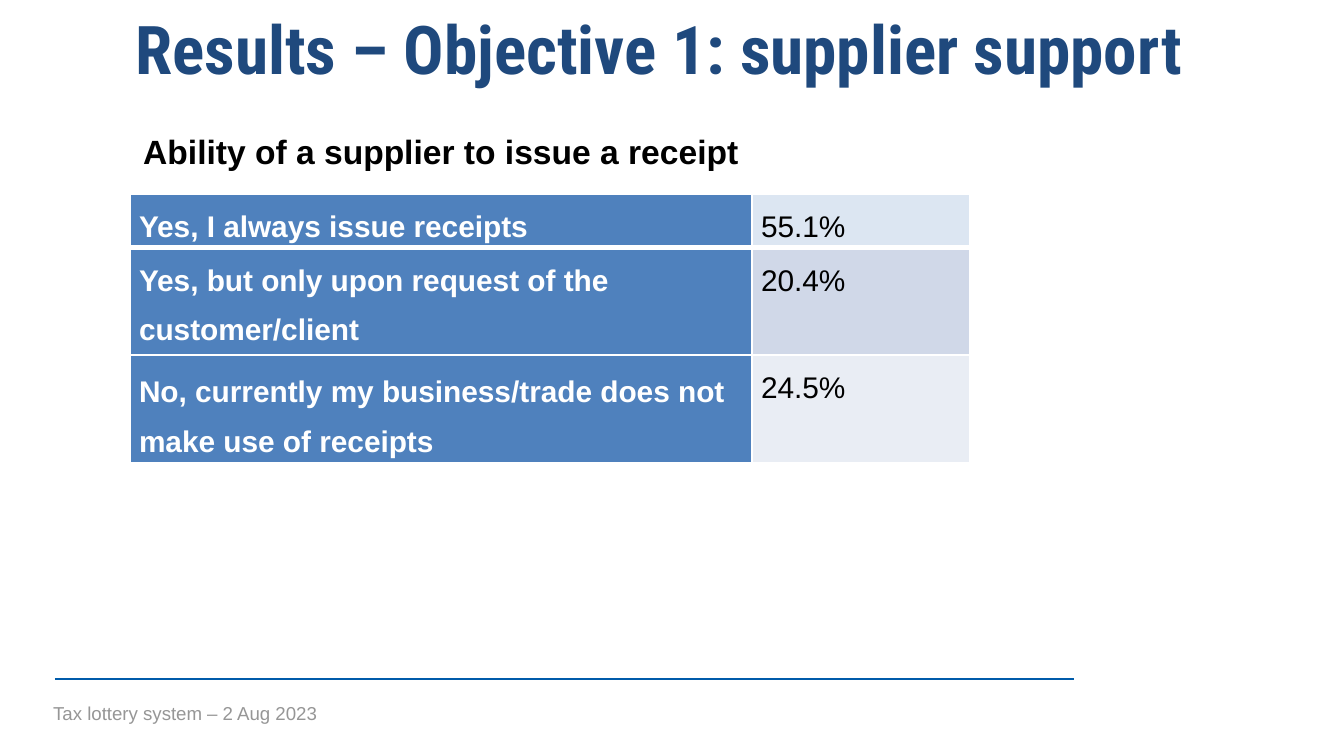
import pptx
import pptx.dml.color
import pptx.enum.shapes
import pptx.enum.text
import pptx.oxml
import pptx.oxml.ns
import pptx.util

RGBColor = pptx.dml.color.RGBColor
Anchor = pptx.enum.text.MSO_ANCHOR
Align = pptx.enum.text.PP_ALIGN

NAVY = RGBColor(0x1F, 0x49, 0x7D)
RULE_BLUE = RGBColor(0x00, 0x5B, 0xAA)
LABEL_BLUE = RGBColor(0x4F, 0x81, 0xBD)
GREY = RGBColor(0x96, 0x96, 0x96)
BLACK = RGBColor(0x00, 0x00, 0x00)
WHITE = RGBColor(0xFF, 0xFF, 0xFF)

PX = 914400 / 134.4


def px(length):
    return pptx.util.Emu(round(length * PX))


def write(frame, text, size, color, bold=False, font="Arial"):
    """Put one run in the first paragraph and return that paragraph."""
    para = frame.paragraphs[0]
    span = para.add_run()
    span.text = text
    span.font.name = font
    span.font.size = pptx.util.Pt(size)
    span.font.bold = bold
    span.font.color.rgb = color
    return para


deck = pptx.Presentation()
deck.slide_width, deck.slide_height = px(1344), px(756)
page = deck.slides.add_slide(deck.slide_layouts[5])

# Title
title = page.shapes.title
title.left, title.top, title.width, title.height = px(24), px(4), px(1270), px(89)
frame = title.text_frame
frame.word_wrap = True
frame.auto_size = pptx.enum.text.MSO_AUTO_SIZE.NONE
frame.vertical_anchor = Anchor.TOP
frame.margin_left = frame.margin_right = px(7)
frame.margin_top = frame.margin_bottom = px(3)
para = write(frame, "Results – Objective 1: supplier support", 36, NAVY, True, "Roboto Condensed")
para.alignment = Align.CENTER

# Footer rule
rule = page.shapes.add_connector(
    pptx.enum.shapes.MSO_CONNECTOR.STRAIGHT, px(55), px(679), px(1074), px(679))
rule.line.color.rgb = RULE_BLUE
rule.line.width = pptx.util.Pt(1)
rule._element.spPr.append(pptx.oxml.parse_xml(
    f"<a:effectLst {pptx.oxml.ns.nsdecls('a')}/>"))

# Table heading and footer text
for text, left, top, width, height, size, color, bold in (
    ("Ability of a supplier to issue a receipt", 130, 124, 925, 54, 18, BLACK, True),
    ("Tax lottery system – 2 Aug 2023", 40, 695, 1034, 36, 10, GREY, False),
):
    box = page.shapes.add_textbox(px(left), px(top), px(width), px(height))
    box.text_frame.word_wrap = True
    write(box.text_frame, text, size, color, bold)

# Answers: label, share, row height, share fill, label anchor
answers = (
    ("Yes, I always issue receipts", "55.1%", 53,
     RGBColor(0xDC, 0xE6, 0xF2), Anchor.TOP),
    ("Yes, but only upon request of the customer/client", "20.4%", 107,
     RGBColor(0xD0, 0xD8, 0xE8), Anchor.TOP),
    ("No, currently my business/trade does not make use of receipts", "24.5%", 107,
     RGBColor(0xE9, 0xED, 0xF4), Anchor.MIDDLE),
)
table = page.shapes.add_table(
    len(answers), 2, px(130), px(194), px(840), px(267)).table
table.first_row = table.horz_banding = False
table.columns[0].width, table.columns[1].width = px(622), px(218)

for row, (label, share, height, share_fill, label_anchor) in enumerate(answers):
    table.rows[row].height = px(height)
    for column, (text, color, fill, anchor) in enumerate((
        (label, WHITE, LABEL_BLUE, label_anchor),
        (share, BLACK, share_fill, Anchor.TOP),
    )):
        cell = table.cell(row, column)
        cell.margin_left = cell.margin_right = px(9)
        cell.margin_top = cell.margin_bottom = 0
        cell.vertical_anchor = anchor
        para = write(cell.text_frame, text, 16, color, column == 0)
        para.line_spacing = 1.5
        para.space_after = pptx.util.Pt(8)
        thick_sides = {0: ("lnB",), 1: ("lnT",)}.get(row, ())
        for side in ("lnL", "lnR", "lnT", "lnB"):
            width = pptx.util.Pt(3 if side in thick_sides else 1)
            cell._tc.get_or_add_tcPr().append(pptx.oxml.parse_xml(
                f'<a:{side} {pptx.oxml.ns.nsdecls("a")} w="{width}"><a:solidFill>'
                f'<a:srgbClr val="{WHITE}"/></a:solidFill></a:{side}>'))
        cell.fill.solid()
        cell.fill.fore_color.rgb = fill

deck.save("out.pptx")
